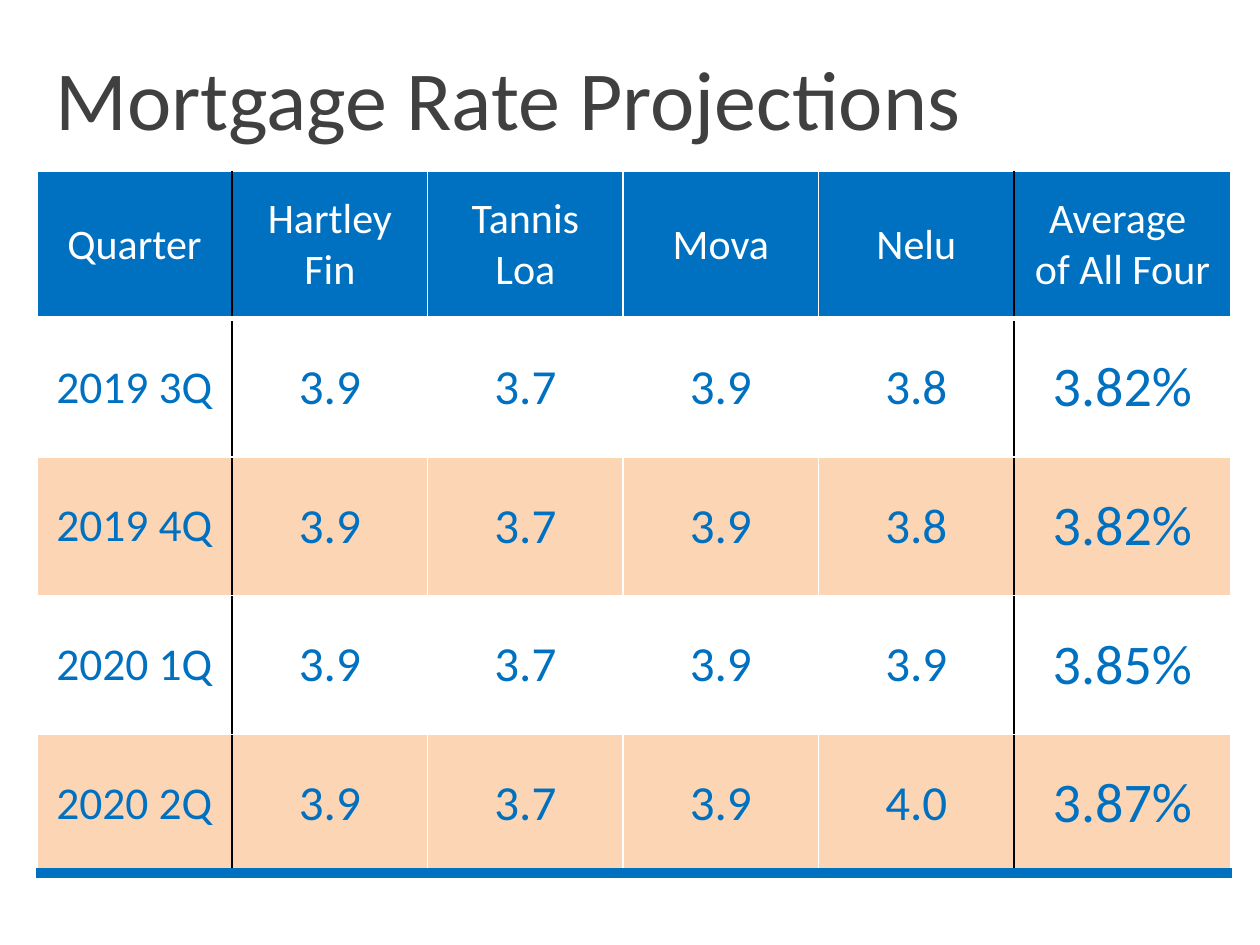
from lxml import etree
from pptx import Presentation
from pptx.dml.color import RGBColor
from pptx.enum import text as txt
from pptx.oxml import ns
from pptx.util import Pt

BLUE = RGBColor(0x00, 0x70, 0xC0)
PEACH = RGBColor(0xFC, 0xD5, 0xB5)
WHITE = RGBColor(0xFF, 0xFF, 0xFF)
BLACK = RGBColor(0x00, 0x00, 0x00)
DARK_GREY = RGBColor(0x40, 0x40, 0x40)


def write(frame, content, size, color, align):
    """Fill a text frame, one paragraph for each line of content."""
    frame.text = content
    for paragraph in frame.paragraphs:
        paragraph.alignment = align
        for run in paragraph.runs:
            run.font.name = "Calibri"
            run.font.size = Pt(size)
            run.font.color.rgb = color


def add_border(cell, side, color, width):
    """Draw one cell edge; side is L, R, T or B, in that order, before the fill."""
    line = etree.SubElement(cell._tc.get_or_add_tcPr(), ns.qn(f"a:ln{side}"), w=str(Pt(width)))
    solid = etree.SubElement(line, ns.qn("a:solidFill"))
    etree.SubElement(solid, ns.qn("a:srgbClr"), val=str(color))


prs = Presentation()
prs.slide_width, prs.slide_height = Pt(720), Pt(540)
slide = prs.slides.add_slide(prs.slide_layouts[5])

title = slide.shapes.title
title.left, title.top, title.width, title.height = Pt(24.5), Pt(23), Pt(624), Pt(65.5)
title.text_frame.vertical_anchor = txt.MSO_ANCHOR.TOP
title.text_frame.auto_size = txt.MSO_AUTO_SIZE.NONE
write(title.text_frame, "Mortgage Rate Projections", size=48, color=DARK_GREY,
      align=txt.PP_ALIGN.LEFT)

projections = [
    ["Quarter", "Hartley Fin", "Tannis Loa", "Mova", "Nelu", "Average \nof All Four"],
    ["2019 3Q", "3.9", "3.7", "3.9", "3.8", "3.82%"],
    ["2019 4Q", "3.9", "3.7", "3.9", "3.8", "3.82%"],
    ["2020 1Q", "3.9", "3.7", "3.9", "3.9", "3.85%"],
    ["2020 2Q", "3.9", "3.7", "3.9", "4.0", "3.87%"],
]
column_widths = [111.7] * 5 + [124]
row_heights = [84] + [79.2] * 4
rate_sizes = [26, 28, 28, 28, 28, 32]
last_row = len(projections) - 1
last_column = len(column_widths) - 1

rates = slide.shapes.add_table(
    len(projections), len(column_widths), Pt(21), Pt(98),
    Pt(sum(column_widths)), Pt(sum(row_heights))).table
rates.first_row = rates.horz_banding = False
for column, width in zip(rates.columns, column_widths):
    column.width = Pt(width)
for row, height in zip(rates.rows, row_heights):
    row.height = Pt(height)

for r, values in enumerate(projections):
    for c, value in enumerate(values):
        cell = rates.cell(r, c)
        cell.vertical_anchor = txt.MSO_ANCHOR.MIDDLE
        cell.margin_left = cell.margin_right = Pt(7.2)
        cell.margin_top = cell.margin_bottom = Pt(5)
        write(cell.text_frame, value, size=rate_sizes[c] if r else 24,
              color=BLUE if r else WHITE, align=txt.PP_ALIGN.CENTER)

        # Black rules set off the quarter and average columns
        add_border(cell, "L", BLACK if c in (1, last_column) else WHITE, 1)
        add_border(cell, "R", BLACK if c in (0, last_column - 1) else WHITE, 1)
        add_border(cell, "T", WHITE, 3 if r == 1 else 1)
        if r == last_row:
            add_border(cell, "B", BLUE, 6)
        else:
            add_border(cell, "B", WHITE, 1 if r else 3)

        cell.fill.solid()
        cell.fill.fore_color.rgb = BLUE if r == 0 else WHITE if r % 2 else PEACH

prs.save("out.pptx")
